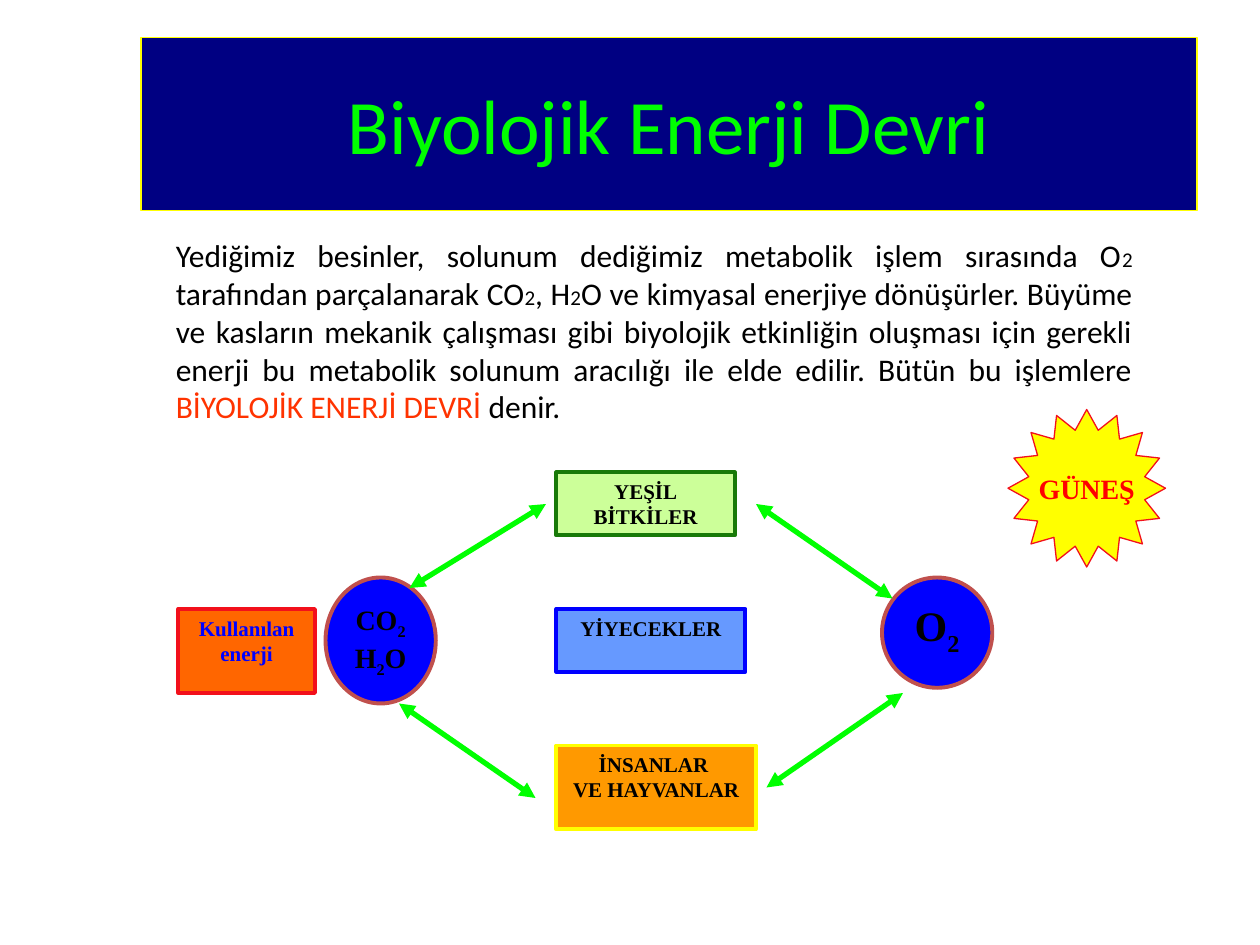
"""Build the slide on the biological energy cycle."""
import pptx
import pptx.dml.color
import pptx.enum.shapes
import pptx.enum.text
import pptx.oxml.ns
import pptx.oxml.xmlchemy
import pptx.util
import lxml.etree

Pt = pptx.util.Pt
Kind = pptx.enum.shapes.MSO_SHAPE
Align = pptx.enum.text.PP_ALIGN
Anchor = pptx.enum.text.MSO_ANCHOR
qn = pptx.oxml.ns.qn
SERIF = "Times New Roman"
HUES = {
    "navy": "000082", "lime": "00FF00", "yellow": "FFFF00", "black": "000000",
    "blue": "0000FF", "brick": "C0504D", "flame": "FF6600", "red": "F2101B",
    "amber": "FF9900", "sky": "6699FF", "mint": "CCFF99", "green": "187A08",
    "pure": "FF0000", "coral": "FF3300",
}


def paint(shape, fill, line, width):
    shape.fill.solid()
    shape.fill.fore_color.rgb = pptx.dml.color.RGBColor.from_string(HUES[fill])
    shape.line.color.rgb = pptx.dml.color.RGBColor.from_string(HUES[line])
    shape.line.width = Pt(width)


def write(para, text, size, hue, font="Calibri", bold=False):
    run = para.add_run()
    run.text = text
    run.font.size = Pt(size)
    run.font.name = font
    run.font.bold = bold
    run.font.color.rgb = pptx.dml.color.RGBColor.from_string(HUES[hue])
    return run


deck = pptx.Presentation()
deck.slide_width, deck.slide_height = Pt(720), Pt(540)
slide = deck.slides.add_slide(deck.slide_layouts[1])

title = slide.shapes.title
title.left, title.top, title.width, title.height = Pt(80.64), Pt(21.6), Pt(603.36), Pt(98.64)
paint(title, "navy", "yellow", 0.75)
title.text_frame.vertical_anchor = Anchor.MIDDLE
para = title.text_frame.paragraphs[0]
para.alignment = Align.CENTER
write(para, "Biyolojik Enerji Devri", 44, "lime")

body = slide.placeholders[1]
body.left, body.top, body.width, body.height = Pt(66.24), Pt(126), Pt(588.24), Pt(365.76)
body.text_frame.auto_size = pptx.enum.text.MSO_AUTO_SIZE.NONE
body.text_frame.margin_top = Pt(9)
para = body.text_frame.paragraphs[0]
para.alignment = Align.JUSTIFY
para.space_before = Pt(0)
props = para._p.get_or_add_pPr()
props.set("marL", str(Pt(27)))
props.set("indent", "0")
lxml.etree.SubElement(props, qn("a:buNone"))
for text, size, hue in [
    ("Yediğimiz besinler, solunum dediğimiz metabolik işlem sırasında O", 18, "black"),
    ("2", 12, "black"),
    (" tarafından parçalanarak CO", 18, "black"),
    ("2", 12, "black"),
    (", H", 18, "black"),
    ("2", 12, "black"),
    ("O ve kimyasal enerjiye dönüşürler. Büyüme ve kasların mekanik çalışması gibi "
     "biyolojik etkinliğin oluşması için gerekli enerji bu metabolik solunum aracılığı "
     "ile elde edilir. Bütün bu işlemlere ", 18, "black"),
    ("BİYOLOJİK ENERJİ DEVRİ", 18, "coral"),
    (" denir.", 18, "black"),
]:
    write(para, text, size, hue)

nodes = [
    (Kind.OVAL, (186, 330, 63, 72), "blue", "brick", 2.25, 16, "black",
     [["CO", "2"], ["H", "2", "O"]]),
    (Kind.OVAL, (504, 330, 63, 63), "blue", "brick", 2.25, 24, "black", [["O", "2"]]),
    (Kind.RECTANGLE, (102, 348, 78, 48), "flame", "red", 2.25, 12, "blue",
     [["Kullanılan enerji"]]),
    (Kind.RECTANGLE, (318, 426, 114, 48), "amber", "yellow", 2.25, 12, "black",
     [["İNSANLAR "], ["VE HAYVANLAR"]]),
    (Kind.RECTANGLE, (318, 348, 108, 36), "sky", "blue", 2.25, 12, "black",
     [["YİYECEKLER"]]),
    (Kind.RECTANGLE, (318, 270, 102, 36), "mint", "green", 2.25, 12, "black",
     [["YEŞİL"], ["BİTKİLER"]]),
    (Kind.STAR_16_POINT, (576, 234, 90, 90), "yellow", "red", 0.75, 16, "pure",
     [["GÜNEŞ"]]),
]
for kind, place, fill, line, width, size, hue, rows in nodes:
    node = slide.shapes.add_shape(kind, *map(Pt, place))
    node.shadow.inherit = False
    paint(node, fill, line, width)
    star = kind == Kind.STAR_16_POINT
    frame = node.text_frame
    frame.word_wrap = not star
    frame.vertical_anchor = Anchor.MIDDLE if star else Anchor.TOP
    for i, row in enumerate(rows):
        para = frame.add_paragraph() if i else frame.paragraphs[0]
        para.alignment = Align.CENTER
        for text in row:
            run = write(para, text, size, hue, SERIF, True)
            if text == "2":
                run.font._element.set("baseline", "-25000")

for ends in [(234, 336, 312, 288), (228, 402, 306, 456),
             (438, 450, 516, 396), (432, 288, 510, 342)]:
    arrow = slide.shapes.add_connector(pptx.enum.shapes.MSO_CONNECTOR.STRAIGHT, *map(Pt, ends))
    arrow.line.color.rgb = pptx.dml.color.RGBColor.from_string(HUES["lime"])
    arrow.line.width = Pt(3)
    for tip in ("a:headEnd", "a:tailEnd"):
        lxml.etree.SubElement(arrow.line._get_or_add_ln(), qn(tip), type="triangle")
    lxml.etree.SubElement(arrow._element.spPr, qn("a:effectLst"))

deck.save("out.pptx")
